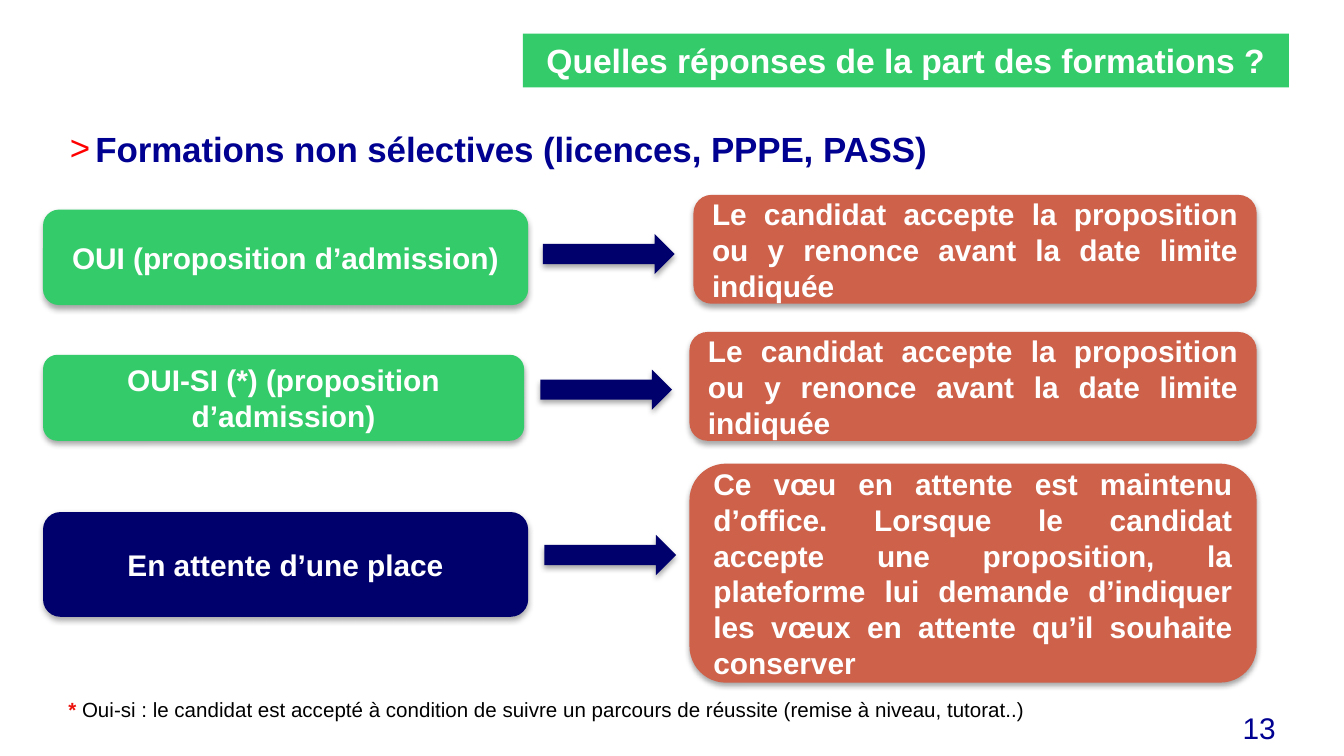
from lxml.etree import SubElement
from pptx import Presentation
from pptx.dml.color import RGBColor
from pptx.enum.shapes import MSO_SHAPE as Shape
from pptx.enum.text import MSO_ANCHOR as Anchor, MSO_AUTO_SIZE as AutoSize, PP_ALIGN as Align
from pptx.oxml.ns import qn
from pptx.util import Inches, Pt

GREEN, NAVY, BRICK, WHITE = "34CB6A", "00006D", "CE614A", "FFFFFF"
HEADING_BLUE, RED, NOTE_RED, BLACK = "000091", "FF0000", "EC130E", "000000"
ANSWER = "Le candidat accepte la proposition ou y renonce avant la date limite indiquée"
WAITING = (
    "Ce vœu en attente est maintenu d’office. Lorsque le candidat accepte une "
    "proposition, la plateforme lui demande d’indiquer les vœux en attente "
    "qu’il souhaite conserver"
)

# Each row: response, its colour and box, arrow position, consequence and its box
ROWS = [
    ("OUI (proposition d’admission)", GREEN, (0.32, 1.56, 3.61, 0.71),
     (4.04, 1.74), ANSWER, (5.16, 1.45, 4.19, 0.81)),
    ("OUI-SI (*) (proposition d’admission)", GREEN, (0.32, 2.64, 3.58, 0.64),
     (4.02, 2.75), ANSWER, (5.13, 2.47, 4.22, 0.81)),
    ("En attente d’une place", NAVY, (0.32, 3.81, 3.61, 0.78),
     (4.05, 3.98), WAITING, (5.13, 3.45, 4.22, 1.63)),
]
ARROW_SIZE = (0.98, 0.3)


def rgb(value):
    return RGBColor.from_string(value)


def inches(box):
    return [Inches(length) for length in box]


def set_all(target, values):
    for name, value in values.items():
        setattr(target, name, value)


def set_fill(shape, colour):
    shape.fill.solid()
    shape.fill.fore_color.rgb = rgb(colour)
    shape.line.fill.background()


def add_run(paragraph, text, size, colour, bold=True):
    run = paragraph.add_run()
    run.text = text
    set_all(run.font, {"name": "Arial", "size": Pt(size), "bold": bold})
    run.font.color.rgb = rgb(colour)


def first_paragraph(shape, align, anchor=Anchor.MIDDLE):
    set_all(shape.text_frame, {"word_wrap": True, "auto_size": AutoSize.NONE,
                               "vertical_anchor": anchor})
    paragraph = shape.text_frame.paragraphs[0]
    paragraph.alignment = align
    return paragraph


def add_block(slide, kind, box, colour):
    block = slide.shapes.add_shape(kind, *inches(box))
    block.shadow.inherit = False
    set_fill(block, colour)
    return block


def add_soft_shadow(shape):
    effects = shape._element.spPr.find(qn("a:effectLst"))
    shadow = SubElement(effects, qn("a:outerShdw"), blurRad=str(Pt(3.1)),
                        dist=str(Pt(1.8)), dir="5400000", rotWithShape="0")
    colour = SubElement(shadow, qn("a:srgbClr"), val=BLACK)
    SubElement(colour, qn("a:alpha"), val="35000")


def add_card(slide, text, box, colour, align):
    card = add_block(slide, Shape.ROUNDED_RECTANGLE, box, colour)
    add_soft_shadow(card)
    add_run(first_paragraph(card, align), text, 16, WHITE)


def add_title(slide):
    title = slide.shapes.title
    set_all(title, dict(zip(("left", "top", "width", "height"),
                            inches((3.89, 0.25, 5.7, 0.4)))))
    set_fill(title, GREEN)
    add_run(first_paragraph(title, Align.CENTER),
            "Quelles réponses de la part des formations ?", 18, WHITE)


def add_heading(slide):
    heading = slide.shapes.add_textbox(*inches((0.39, 0.88, 9.2, 0.49)))
    set_all(heading.text_frame, {
        "margin_left": Inches(0.13), "margin_right": Inches(0.13),
        "margin_top": Inches(0.07), "margin_bottom": Inches(0.07)})
    paragraph = first_paragraph(heading, Align.LEFT, Anchor.TOP)
    # Red ">" bullet with a hanging indent
    props = paragraph._p.get_or_add_pPr()
    props.set("marL", str(Inches(0.19)))
    props.set("indent", str(-Inches(0.19)))
    SubElement(SubElement(props, qn("a:buClr")), qn("a:srgbClr"), val=RED)
    SubElement(props, qn("a:buFont"), typeface="Arial")
    SubElement(props, qn("a:buChar"), char=">")
    add_run(paragraph, "Formations non sélectives (licences, PPPE, PASS)", 18.66, HEADING_BLUE)


def add_footnote(slide):
    note = add_block(slide, Shape.RECTANGLE, (0.41, 5.14, 8.37, 0.49), WHITE)
    paragraph = first_paragraph(note, Align.LEFT, Anchor.TOP)
    add_run(paragraph, "* ", 11, NOTE_RED)
    add_run(paragraph, "Oui-si : le candidat est accepté à condition de suivre un parcours "
            "de réussite (remise à niveau, tutorat..)", 11, BLACK, bold=False)


def add_page_number(slide):
    number = slide.shapes.add_textbox(*inches((8.31, 5.23, 1.28, 0.39)))
    add_run(first_paragraph(number, Align.RIGHT, Anchor.TOP), "13", 16, HEADING_BLUE, bold=False)


def main():
    deck = Presentation()
    # Widescreen 16:9 page
    width = Inches(10)
    set_all(deck, {"slide_width": width, "slide_height": width * 9 // 16})
    slide = deck.slides.add_slide(deck.slide_layouts[5])

    add_title(slide)
    add_heading(slide)
    # Response, arrow and consequence on each row
    for response, colour, response_box, arrow_at, outcome, outcome_box in ROWS:
        add_card(slide, response, response_box, colour, Align.CENTER)
        arrow = add_block(slide, Shape.RIGHT_ARROW, arrow_at + ARROW_SIZE, NAVY)
        add_soft_shadow(arrow)
        add_card(slide, outcome, outcome_box, BRICK, Align.JUSTIFY)
    add_footnote(slide)
    add_page_number(slide)

    deck.save("out.pptx")


if __name__ == "__main__":
    main()
